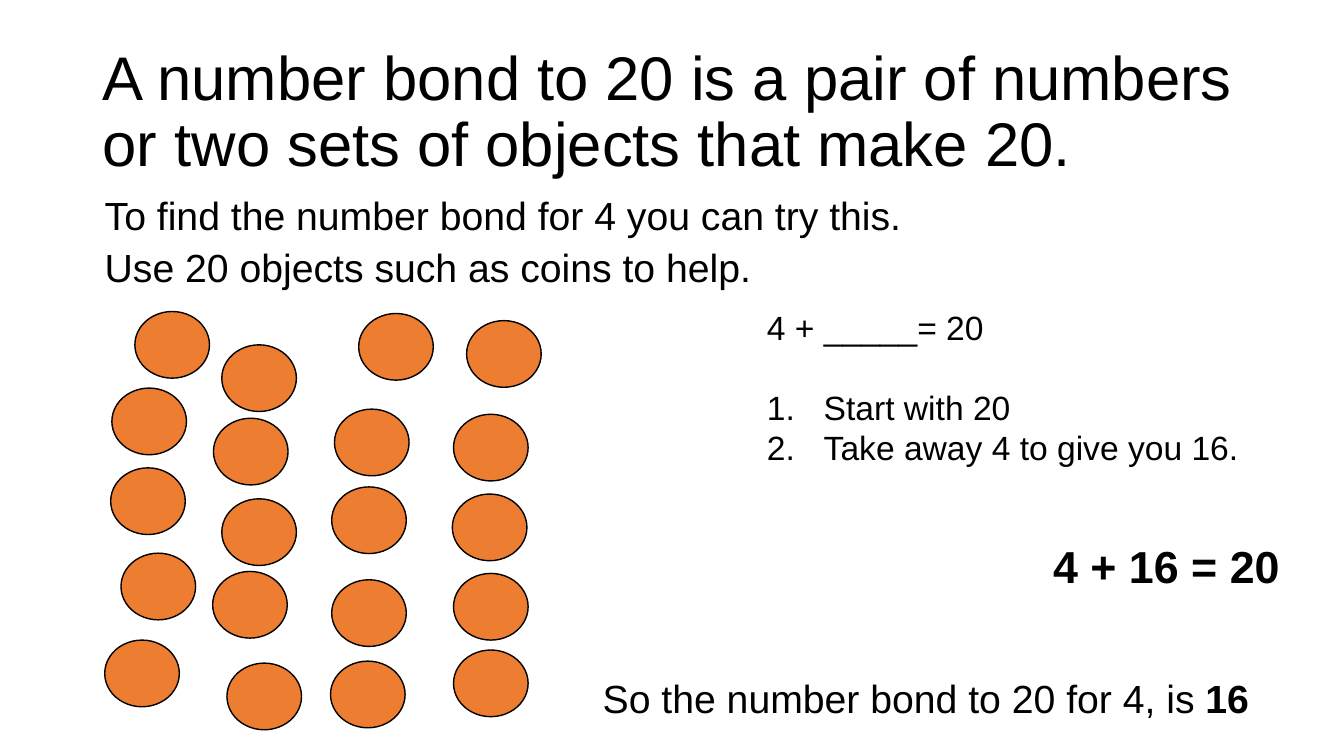
from dataclasses import dataclass

from lxml.etree import SubElement
from pptx import Presentation
from pptx.dml.color import RGBColor
from pptx.enum.shapes import MSO_SHAPE
from pptx.enum.text import MSO_ANCHOR
from pptx.oxml.ns import qn
from pptx.slide import Slide
from pptx.text.text import TextFrame
from pptx.util import Cm, Pt

COLORS = {"text": "000000", "coin": "ED7D31", "outline": "000000"}
FONT = "Arial"
COIN_WIDTH, COIN_HEIGHT = 1.88, 1.68
NUMBER_INDENT = Cm(1.43)


@dataclass(frozen=True)
class Area:
    """A rectangle on the slide, in centimetres."""
    left: float
    top: float
    width: float
    height: float


@dataclass(frozen=True)
class Coin:
    left: float
    top: float


COIN_COLUMNS = [
    [Coin(3.4, 7.85), Coin(2.82, 9.78), Coin(2.79, 11.79), Coin(3.05, 13.94), Coin(2.64, 16.13)],
    [Coin(5.59, 8.69), Coin(5.38, 10.54), Coin(5.59, 12.57), Coin(5.36, 14.4), Coin(5.72, 16.71)],
    [Coin(9.04, 7.9), Coin(8.43, 10.31), Coin(8.36, 12.27), Coin(8.36, 14.61), Coin(8.33, 16.66)],
    [Coin(11.76, 8.08), Coin(11.43, 10.44), Coin(11.4, 12.45), Coin(11.43, 14.45), Coin(11.43, 16.38)],
]


def add_coin(page: Slide, coin: Coin) -> None:
    shape = page.shapes.add_shape(
        MSO_SHAPE.OVAL, Cm(coin.left), Cm(coin.top), Cm(COIN_WIDTH), Cm(COIN_HEIGHT))
    shape.shadow.inherit = False
    shape.fill.solid()
    shape.fill.fore_color.rgb = RGBColor.from_string(COLORS["coin"])
    shape.line.color.rgb = RGBColor.from_string(COLORS["outline"])
    shape.line.width = Pt(1)


def add_text_box(page: Slide, area: Area, anchor: MSO_ANCHOR = MSO_ANCHOR.TOP) -> TextFrame:
    box = page.shapes.add_textbox(
        Cm(area.left), Cm(area.top), Cm(area.width), Cm(area.height))
    frame = box.text_frame
    frame.word_wrap = True
    frame.vertical_anchor = anchor
    return frame


def add_paragraph(frame: TextFrame, text: str, *, size: float, bold: bool = False,
                  bold_end: str = "", line_spacing: float = 1.0,
                  space_before: float = 0, numbered: bool = False) -> None:
    """Write a paragraph, filling the frame's empty first one before adding more."""
    first = frame.paragraphs[0]
    para = frame.add_paragraph() if first.runs else first
    para.line_spacing = line_spacing
    para.space_before = Pt(space_before)
    if numbered:
        properties = para._p.get_or_add_pPr()
        properties.set("marL", str(NUMBER_INDENT))
        properties.set("indent", str(-NUMBER_INDENT))
        SubElement(properties, qn("a:buFont"), typeface="+mj-lt")
        SubElement(properties, qn("a:buAutoNum"), type="arabicPeriod")
    for words, is_bold in ((text, bold), (bold_end, True)):
        if words:
            span = para.add_run()
            span.text = words
            span.font.name = FONT
            span.font.size = Pt(size)
            span.font.bold = is_bold
            span.font.color.rgb = RGBColor.from_string(COLORS["text"])


def main() -> None:
    deck = Presentation()
    deck.slide_width, deck.slide_height = Cm(33.87), Cm(19.05)
    page = deck.slides.add_slide(deck.slide_layouts[6])

    title = add_text_box(page, Area(2.34, 1.02, 29.21, 3.68), MSO_ANCHOR.MIDDLE)
    add_paragraph(
        title, "A number bond to 20 is a pair of numbers or two sets of objects that make 20.",
        size=44, line_spacing=0.9)

    introduction = add_text_box(page, Area(2.39, 4.93, 29.21, 2.69))
    for sentence in ("To find the number bond for 4 you can try this.",
                     "Use 20 objects such as coins to help."):
        add_paragraph(introduction, sentence, size=28, line_spacing=0.8, space_before=10)

    for column in COIN_COLUMNS:
        for coin in column:
            add_coin(page, coin)

    working = add_text_box(page, Area(19.08, 7.62, 14.79, 4.37))
    add_paragraph(working, "4 + _____= 20", size=24)
    add_paragraph(working, "Start with 20", size=24, space_before=28, numbered=True)
    add_paragraph(working, "Take away 4 to give you 16.", size=24, numbered=True)

    equation = add_text_box(page, Area(26.29, 13.46, 7.5, 1.63))
    add_paragraph(equation, "4 + 16 = 20", size=32, bold=True)

    conclusion = add_text_box(page, Area(14.94, 16.99, 18.9, 2))
    add_paragraph(conclusion, "So the number bond to 20 for 4, is ", bold_end="16",
                  size=28, line_spacing=0.9, space_before=10)

    deck.save("out.pptx")


if __name__ == "__main__":
    main()
